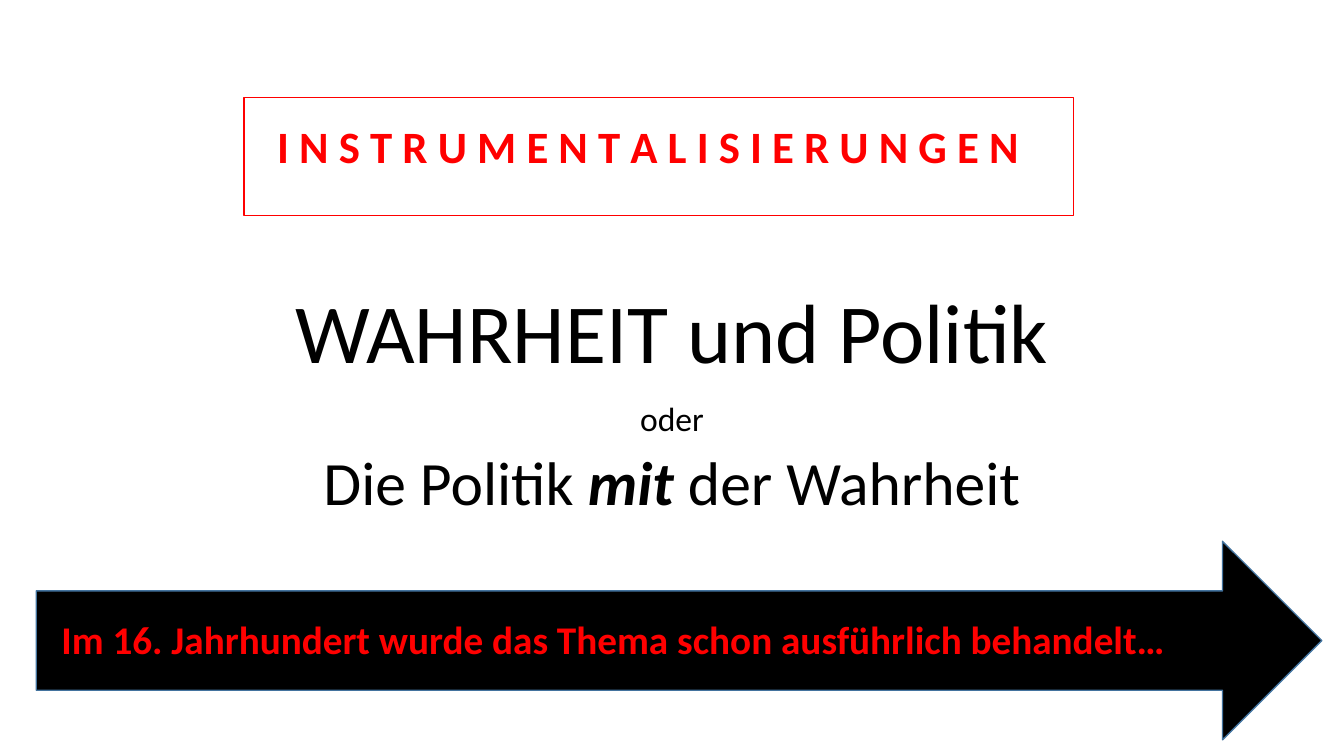
"""Build the slide on truth and politics with python-pptx."""
import dataclasses
import typing

import pptx
import pptx.dml.color
import pptx.enum.shapes
import pptx.enum.text
import pptx.util

BLACK = pptx.dml.color.RGBColor(0x00, 0x00, 0x00)
WHITE = pptx.dml.color.RGBColor(0xFF, 0xFF, 0xFF)
RED = pptx.dml.color.RGBColor(0xFF, 0x00, 0x00)
STEEL_BLUE = pptx.dml.color.RGBColor(0x43, 0x73, 0x9E)

SLIDE_WIDTH = pptx.util.Inches(13.33)
SLIDE_HEIGHT = pptx.util.Inches(7.5)
TITLE_ONLY_LAYOUT = 5

RECTANGLE = pptx.enum.shapes.MSO_SHAPE.RECTANGLE
RIGHT_ARROW = pptx.enum.shapes.MSO_SHAPE.RIGHT_ARROW
ANCHOR = pptx.enum.text.MSO_ANCHOR
ALIGN = pptx.enum.text.PP_ALIGN

LABEL_FRAME = {"word_wrap": True, "vertical_anchor": ANCHOR.TOP,
               "auto_size": pptx.enum.text.MSO_AUTO_SIZE.SHAPE_TO_FIT_TEXT}
HEADING_FRAME = {"word_wrap": True, "auto_size": pptx.enum.text.MSO_AUTO_SIZE.NONE}
TITLE_FRAME = HEADING_FRAME | {"vertical_anchor": ANCHOR.BOTTOM}
SUBTITLE_FRAME = HEADING_FRAME | {"vertical_anchor": ANCHOR.TOP}
LEFT = {"alignment": ALIGN.LEFT}
CENTRED = {"alignment": ALIGN.CENTER, "line_spacing": 0.9}
CENTRED_SPACED = CENTRED | {"space_before": pptx.util.Pt(10)}


class Box(typing.NamedTuple):
    """Position and size in percent of the slide's width and height."""
    left: float
    top: float
    width: float
    height: float


class Run(typing.NamedTuple):
    """A piece of text with its size and emphasis."""
    text: str
    size: int
    bold: bool = False
    italic: bool = False


@dataclasses.dataclass
class Panel:
    """A filled shape with an optional outline and label."""
    box: Box
    kind: pptx.enum.shapes.MSO_SHAPE
    fill: pptx.dml.color.RGBColor
    line: pptx.dml.color.RGBColor | None = None
    label: Run | None = None


TITLE_BOX = Box(12.5, 16.4, 75, 34.8)
TITLE = [[Run("WAHRHEIT und Politik", 60)]]
SUBTITLE_BOX = Box(12.5, 52.53, 75, 24.13)
SUBTITLE = [
    [Run("oder", 24)],
    [Run("Die Politik ", 44), Run("mit", 44, True, True), Run(" der Wahrheit", 44)],
]
PANELS = [
    Panel(Box(18.15, 12.93, 61.74, 15.6), RECTANGLE, WHITE, line=RED),
    Panel(Box(19.88, 15.07, 58.14, 8.53), RECTANGLE, WHITE,
          label=Run("I N S T R U M E N T A L I S I E R U N G E N", 32, True)),
    Panel(Box(2.7, 71.6, 95.65, 26.27), RIGHT_ARROW, BLACK, line=STEEL_BLUE),
    Panel(Box(3.83, 80.8, 87.17, 7.6), RECTANGLE, BLACK,
          label=Run("Im 16. Jahrhundert wurde das Thema schon ausführlich behandelt…", 28, True)),
]


def apply_format(target: typing.Any, values: dict[str, typing.Any]) -> None:
    """Set every named attribute on the target."""
    for name, value in values.items():
        setattr(target, name, value)


def place(box: Box) -> dict[str, int]:
    """Turn percent shares into slide lengths."""
    return {
        "left": round(SLIDE_WIDTH * box.left / 100),
        "top": round(SLIDE_HEIGHT * box.top / 100),
        "width": round(SLIDE_WIDTH * box.width / 100),
        "height": round(SLIDE_HEIGHT * box.height / 100),
    }


def write_text(shape: typing.Any, lines: list[list[Run]], color: pptx.dml.color.RGBColor,
               frame_format: dict, paragraph_format: dict) -> None:
    """Fill a shape with formatted paragraphs."""
    frame = shape.text_frame
    apply_format(frame, frame_format)
    for index, line in enumerate(lines):
        paragraph = frame.add_paragraph() if index else frame.paragraphs[0]
        apply_format(paragraph, paragraph_format)
        for piece in line:
            run = paragraph.add_run()
            run.text = piece.text
            apply_format(run.font, {"name": "Calibri", "size": pptx.util.Pt(piece.size),
                                    "bold": piece.bold, "italic": piece.italic})
            run.font.color.rgb = color


def draw_panel(slide: typing.Any, panel: Panel) -> None:
    """Draw one panel with its outline and label."""
    shape = slide.shapes.add_shape(panel.kind, **place(panel.box))
    shape.shadow.inherit = False
    shape.fill.solid()
    shape.fill.fore_color.rgb = panel.fill
    if panel.line is None:
        shape.line.fill.background()
    else:
        shape.line.color.rgb = panel.line
        shape.line.width = pptx.util.Pt(1)
    if panel.label:
        write_text(shape, [[panel.label]], RED, LABEL_FRAME, LEFT)


def main() -> None:
    """Build and save the presentation."""
    presentation = pptx.Presentation()
    apply_format(presentation, {"slide_width": SLIDE_WIDTH, "slide_height": SLIDE_HEIGHT})
    slide = presentation.slides.add_slide(presentation.slide_layouts[TITLE_ONLY_LAYOUT])
    title = slide.shapes.title
    apply_format(title, place(TITLE_BOX))
    write_text(title, TITLE, BLACK, TITLE_FRAME, CENTRED)
    subtitle = slide.shapes.add_textbox(**place(SUBTITLE_BOX))
    write_text(subtitle, SUBTITLE, BLACK, SUBTITLE_FRAME, CENTRED_SPACED)
    for panel in PANELS:
        draw_panel(slide, panel)
    presentation.save("out.pptx")


if __name__ == "__main__":
    main()
